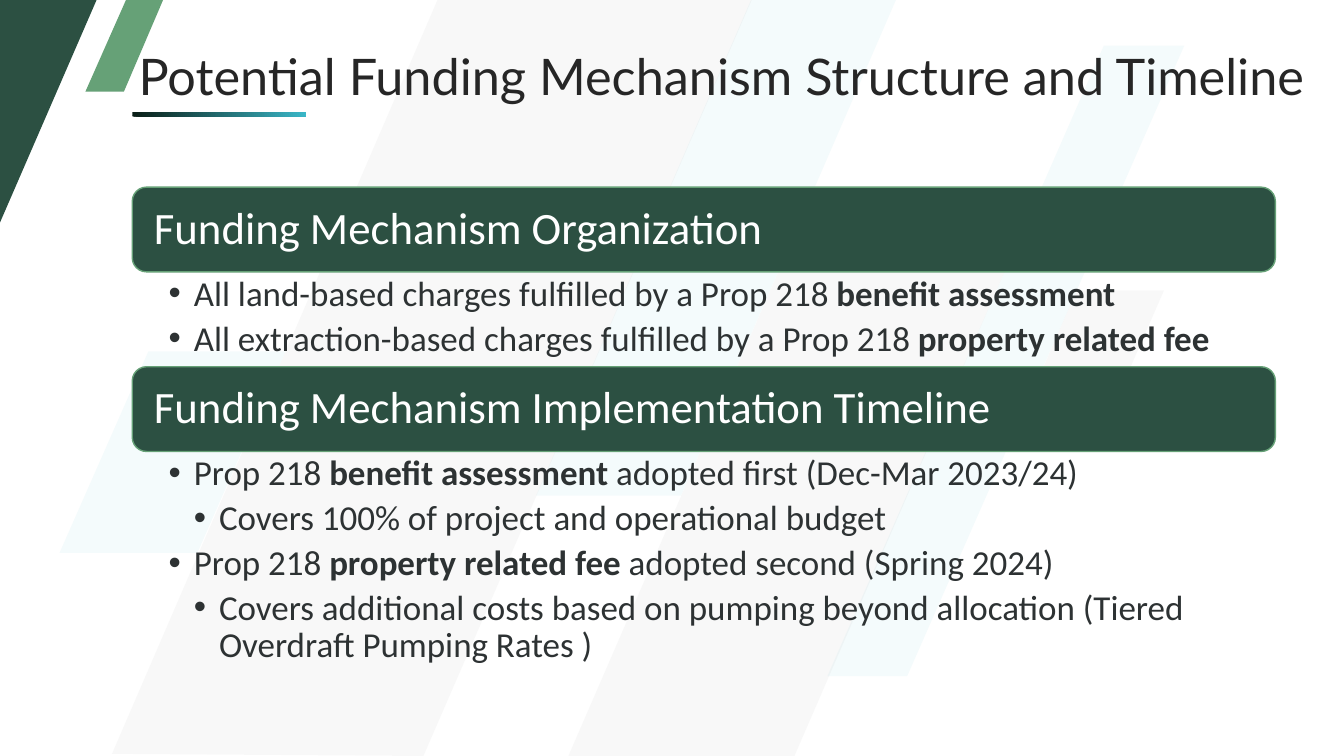
from lxml.etree import SubElement
from pptx import Presentation
from pptx.dml.color import RGBColor
from pptx.enum.shapes import MSO_SHAPE
from pptx.enum.text import MSO_ANCHOR, PP_ALIGN
from pptx.oxml.ns import qn
from pptx.util import Pt

DARK_GREEN = RGBColor(0x2C, 0x50, 0x42)
LIGHT_GREEN = RGBColor(0x66, 0xA1, 0x77)
NEAR_BLACK = RGBColor(0x0A, 0x1E, 0x16)
TEAL = RGBColor(0x3A, 0xB7, 0xC8)
GRAY = RGBColor(0x80, 0x80, 0x80)
TITLE_COLOR = RGBColor(0x26, 0x26, 0x26)
BODY_COLOR = RGBColor(0x2D, 0x32, 0x33)
WHITE = RGBColor(0xFF, 0xFF, 0xFF)

LEFT, WIDTH = 94.5, 816.5
HEADING_HEIGHT = 60.5

BACKGROUND_BANDS = [
    ([(312.5, 0), (537, 0), (302.5, 540), (80, 538.5)], GRAY),
    ([(536.5, 0), (640, 0), (486.5, 354), (383, 354)], TEAL),
    ([(571.5, 158.5), (733, 158.5), (567.5, 540), (406, 540)], GRAY),
    ([(106, 251), (204, 251), (141, 395), (42.5, 395)], TEAL),
    ([(788.5, 32.5), (846, 32.5), (648, 483), (591, 483)], TEAL),
    ([(769, 207.5), (831.5, 207.5), (791.5, 299), (729.5, 299)], GRAY),
]
CORNER_ACCENTS = [
    ([(90, 0), (116.5, 0), (88.5, 65.5), (61, 65.5)], LIGHT_GREEN),
    ([(0, 0), (69, 0), (0, 159)], DARK_GREEN),
]
SECTIONS = [
    ("Funding Mechanism Organization", 133.7, 68, [
        (1, ["All land-based charges fulfilled by a Prop 218 ", "benefit assessment"]),
        (1, ["All extraction-based charges fulfilled by a Prop 218 ", "property related fee"]),
    ]),
    ("Funding Mechanism Implementation Timeline", 262, 164, [
        (1, ["Prop 218 ", "benefit assessment ", "adopted first (Dec-Mar 2023/24)"]),
        (2, ["Covers 100% of project and operational budget"]),
        (1, ["Prop 218 ", "property related fee ", "adopted second (Spring 2024)"]),
        (2, ["Covers additional costs based on pumping beyond allocation "
             "(Tiered Overdraft Pumping Rates )"]),
    ]),
]


def style_font(font, name, size, color):
    """Set the typeface, size and colour of a font."""
    font.name = name
    font.size = Pt(size)
    font.color.rgb = color


def set_frame(text_frame, left, top, right, bottom, anchor):
    """Set wrapping, margins and vertical anchor of a text frame."""
    text_frame.word_wrap = True
    text_frame.margin_left, text_frame.margin_top = Pt(left), Pt(top)
    text_frame.margin_right, text_frame.margin_bottom = Pt(right), Pt(bottom)
    text_frame.vertical_anchor = anchor


def add_polygon(slide, corners, color, opacity=100):
    """Add a closed, borderless polygon with an opacity in percent."""
    points = [(Pt(x), Pt(y)) for x, y in corners]
    builder = slide.shapes.build_freeform(*points[0])
    builder.add_line_segments(points[1:], close=True)
    shape = builder.convert_to_shape()
    shape.shadow.inherit = False
    shape.line.fill.background()
    shape.fill.solid()
    shape.fill.fore_color.rgb = color
    if opacity < 100:
        fill_color = shape.element.spPr.find(f"{qn('a:solidFill')}/{qn('a:srgbClr')}")
        SubElement(fill_color, qn("a:alpha"), val=str(opacity * 1000))


def add_round_rectangle(slide, left, top, width, height):
    """Add a rounded rectangle without a shadow."""
    shape = slide.shapes.add_shape(
        MSO_SHAPE.ROUNDED_RECTANGLE, Pt(left), Pt(top), Pt(width), Pt(height))
    shape.shadow.inherit = False
    return shape


def add_title(slide, text):
    """Add the slide title."""
    box = slide.shapes.add_textbox(Pt(LEFT), Pt(27.5), Pt(856), Pt(52.5))
    set_frame(box.text_frame, 4.5, 4.5, 4.5, 4.5, MSO_ANCHOR.BOTTOM)
    box.text_frame.text = text
    paragraph = box.text_frame.paragraphs[0]
    paragraph.line_spacing = 1.2
    style_font(paragraph.runs[0].font, "Lato", 36, TITLE_COLOR)


def add_title_rule(slide):
    """Add the gradient bar under the title."""
    bar = add_round_rectangle(slide, LEFT, 79.7, 124.5, 3.6)
    bar.adjustments[0] = 0.24
    bar.line.fill.background()
    bar.fill.gradient()
    bar.fill.gradient_angle = 0
    for stop, color in zip(bar.fill.gradient_stops, (NEAR_BLACK, TEAL)):
        stop.color.rgb = color


def add_heading(slide, text, top):
    """Add a green section heading."""
    shape = add_round_rectangle(slide, LEFT, top, WIDTH, HEADING_HEIGHT)
    shape.fill.solid()
    shape.fill.fore_color.rgb = DARK_GREEN
    shape.line.color.rgb = LIGHT_GREEN
    shape.line.width = Pt(1)
    set_frame(shape.text_frame, 12.5, 9, 12.5, 9, MSO_ANCHOR.MIDDLE)
    shape.text_frame.text = text
    paragraph = shape.text_frame.paragraphs[0]
    paragraph.alignment = PP_ALIGN.LEFT
    paragraph.line_spacing = 0.9
    style_font(paragraph.runs[0].font, "Calibri", 32, WHITE)


def format_bullet(paragraph, level):
    """Give a paragraph its level, hanging indent, bullet and spacing."""
    paragraph.level = level
    properties = paragraph._p.get_or_add_pPr()
    properties.set("marL", str(Pt(18 * level)))
    properties.set("indent", str(-Pt(18)))
    SubElement(properties, qn("a:buFont"), typeface="Arial")
    SubElement(properties, qn("a:buChar"), char="•")
    paragraph.line_spacing = 0.9
    paragraph.space_after = Pt(5)


def add_bullets(slide, items, top, height):
    """Add a bullet list in which every second run is bold."""
    box = slide.shapes.add_textbox(Pt(LEFT), Pt(top), Pt(WIDTH), Pt(height))
    text_frame = box.text_frame
    set_frame(text_frame, 26, 3, 18, 3, MSO_ANCHOR.TOP)
    for index, (level, texts) in enumerate(items):
        paragraph = text_frame.add_paragraph() if index else text_frame.paragraphs[0]
        format_bullet(paragraph, level)
        for position, text in enumerate(texts):
            run = paragraph.add_run()
            run.text = text
            style_font(run.font, "Calibri", 25, BODY_COLOR)
            run.font.bold = position % 2 == 1


def main():
    """Build and save the slide."""
    presentation = Presentation()
    presentation.slide_width, presentation.slide_height = Pt(960), Pt(540)
    slide = presentation.slides.add_slide(presentation.slide_layouts[6])
    for corners, color in BACKGROUND_BANDS:
        add_polygon(slide, corners, color, opacity=5)
    for corners, color in CORNER_ACCENTS:
        add_polygon(slide, corners, color)
    add_title(slide, "Potential Funding Mechanism Structure and Timeline")
    add_title_rule(slide)
    for heading, top, list_height, items in SECTIONS:
        add_heading(slide, heading, top)
        add_bullets(slide, items, top + HEADING_HEIGHT, list_height)
    presentation.save("out.pptx")


if __name__ == "__main__":
    main()
